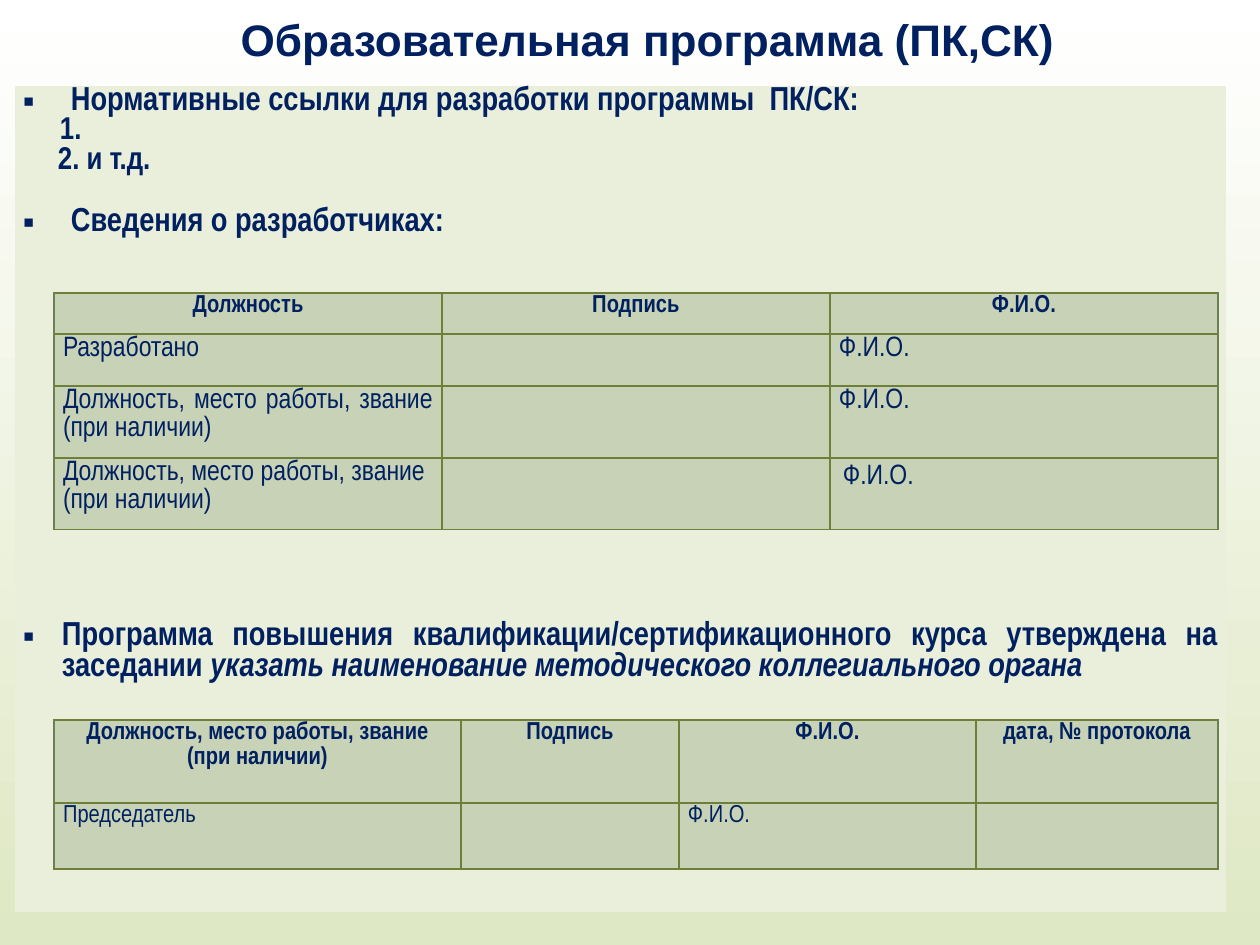
from lxml.etree import SubElement
from pptx import Presentation
from pptx.dml.color import RGBColor
from pptx.enum.text import PP_ALIGN
from pptx.oxml.ns import qn
from pptx.util import Emu, Pt

COLORS = {"ink": "002060", "panel": "EAEFDB", "cell": "C7D2B7", "rule": "6D7F39",
          "edge": "6D804F", "top": "FFFFFF", "bottom": "DFE8C4"}
NO_STYLE = "{2D5ABB26-0587-4C30-8999-92F81FD0307C}"
CENTER, JUSTIFY, LEFT = PP_ALIGN.CENTER, PP_ALIGN.JUSTIFY, PP_ALIGN.LEFT

TITLE = "Образовательная программа (ПК,СК)"
POST = "Должность, место работы, звание (при наличии)"
NAME = "Ф.И.О."

SECTIONS = [
    [
        ("Нормативные ссылки для разработки программы  ПК/СК:", dict(hang=48, bullet="▪")),
        ("1.", dict(size=18, indent=37)),
        ("2. и т.д.", dict(size=18, indent=35)),
        ("Сведения о разработчиках:", dict(hang=48, bullet="▪", before=17.5)),
    ],
    [
        ([("Программа повышения квалификации/сертификационного курса утверждена на заседании ", False),
          ("указать наименование методического коллегиального органа", True)],
         dict(hang=39, bullet="▪", align=JUSTIFY)),
    ],
]
PANEL = dict(left=15, top=86, columns=[1211], rows=[535, 291])

DEVELOPERS = dict(
    left=54, top=293, columns=[388] * 3, rows=[41, 52, 56, 65], size=16,
    cells=[["Должность", "Подпись", NAME],
           ["Разработано", "", NAME],
           [POST, "", NAME],
           [POST, "", NAME]],
    aligns={(1, 0): JUSTIFY, (2, 0): JUSTIFY},
    padded=(3, 2),
)
APPROVAL = dict(
    left=54, top=720, columns=[407, 218, 297, 242], rows=[83, 66], size=14,
    cells=[[POST, "Подпись", NAME, "дата, № протокола"],
           ["Председатель", "", NAME, ""]],
    aligns={(1, 0): JUSTIFY},
    padded=None,
)


def px(value):
    return Emu(round(value * 914400 / 126))


def rgb(name):
    return RGBColor.from_string(COLORS[name])


def write(paragraph, text, size=19, font="Arial Narrow", bold=True, align=LEFT,
          spacing=None, before=None, indent=0, hang=0, bullet=None):
    paragraph.alignment = align
    if spacing:
        paragraph.line_spacing = spacing
    if before:
        paragraph.space_before = Pt(before)
    properties = paragraph._p.get_or_add_pPr()
    properties.set("marL", str(px(indent + hang)))
    properties.set("indent", str(-px(hang)))
    if bullet:
        SubElement(properties, qn("a:buFont"), typeface="Arial")
        SubElement(properties, qn("a:buChar"), char=bullet)
    for words, italic in [(text, False)] if isinstance(text, str) else text:
        run = paragraph.add_run()
        run.text = words
        run.font.size = Pt(size)
        run.font.name = font
        run.font.bold = bold
        run.font.italic = italic
        run.font.color.rgb = rgb("ink")


def add_grid(slide, left, top, columns, rows):
    frame = slide.shapes.add_table(len(rows), len(columns), px(left), px(top),
                                   px(sum(columns)), px(sum(rows)))
    grid = frame.table
    grid.first_row = grid.horz_banding = False
    grid._tbl.tblPr.find(qn("a:tableStyleId")).text = NO_STYLE
    for column, width in zip(grid.columns, columns):
        column.width = px(width)
    for row, height in zip(grid.rows, rows):
        row.height = px(height)
    return grid


def style_cell(cell, fill, side, vertical=0):
    cell.margin_left = cell.margin_right = px(side)
    cell.margin_top = cell.margin_bottom = px(vertical)
    cell.fill.solid()
    cell.fill.fore_color.rgb = rgb(fill)


def add_borders(cell, outer_sides):
    properties = cell._tc.get_or_add_tcPr()
    for side in "LRTB":
        color, width = ("edge", 0.75) if side in outer_sides else ("rule", 1)
        line = SubElement(properties, qn(f"a:ln{side}"), w=str(Pt(width)))
        SubElement(SubElement(line, qn("a:solidFill")), qn("a:srgbClr"), val=COLORS[color])


def add_signatures(slide, left, top, columns, rows, size, cells, aligns, padded):
    grid = add_grid(slide, left, top, columns, rows)
    for r, row in enumerate(cells):
        for c, text in enumerate(row):
            cell = grid.cell(r, c)
            add_borders(cell, ("L" if c == 0 else "") + ("R" if c == len(row) - 1 else ""))
            is_padded = (r, c) == padded
            style_cell(cell, "cell", *((13, 6) if is_padded else (9, 0)))
            if text:
                header = r == 0
                write(cell.text_frame.paragraphs[0], text, size=14 if header else size,
                      bold=header, align=CENTER if header else aligns.get((r, c), LEFT),
                      spacing=None if is_padded else 1.07)


def main():
    deck = Presentation()
    deck.slide_width, deck.slide_height = px(1260), px(945)
    slide = deck.slides.add_slide(deck.slide_layouts[6])

    background = slide.background.fill
    background.gradient()
    background.gradient_angle = 270
    for stop, name, position in zip(background.gradient_stops, ("top", "bottom"), (0, 1)):
        stop.color.rgb = rgb(name)
        stop.position = position

    heading = slide.shapes.add_textbox(px(37), 0, px(1221), px(55)).text_frame
    heading.word_wrap = True
    heading.margin_top = px(12)
    heading.margin_bottom = 0
    write(heading.paragraphs[0], TITLE, size=25.2, font="Arial", align=CENTER)

    panel = add_grid(slide, **PANEL)
    for r, section in enumerate(SECTIONS):
        cell = panel.cell(r, 0)
        style_cell(cell, "panel", 8)
        for i, (text, layout) in enumerate(section):
            frame = cell.text_frame
            write(frame.add_paragraph() if i else frame.paragraphs[0], text, **layout)

    for signatures in (DEVELOPERS, APPROVAL):
        add_signatures(slide, **signatures)

    deck.save("out.pptx")


if __name__ == "__main__":
    main()
